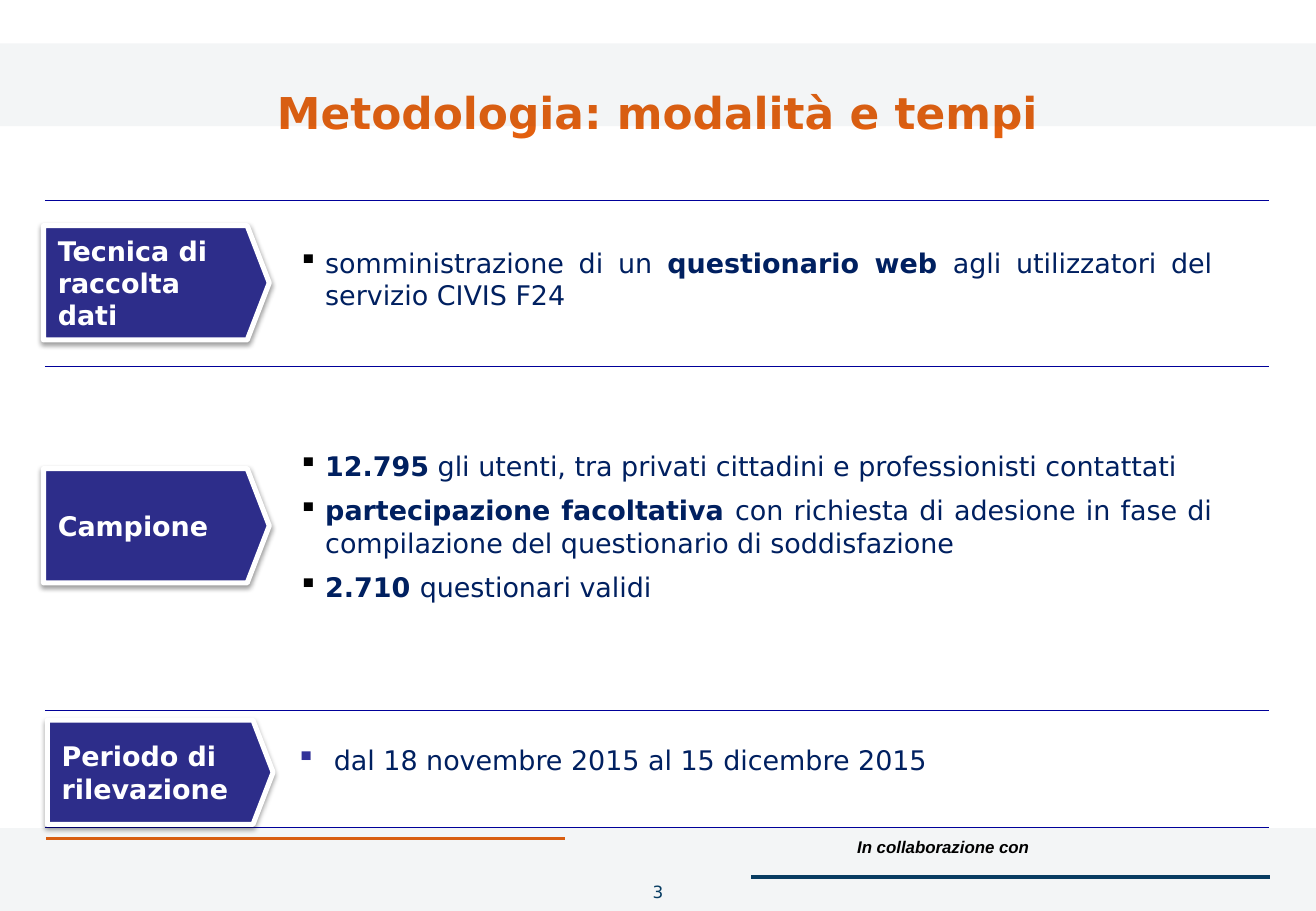
from lxml.etree import SubElement
from pptx import Presentation
from pptx.dml.color import RGBColor
from pptx.enum.shapes import MSO_CONNECTOR as Connector, MSO_SHAPE as Shape
from pptx.enum.text import MSO_ANCHOR as Anchor, PP_ALIGN as Align
from pptx.oxml.ns import qn
from pptx.util import Cm, Pt

ORANGE = RGBColor(0xE3, 0x60, 0x0F)
PETROL = RGBColor(0x07, 0x3C, 0x62)
BAND = RGBColor(0x1E, 0x3D, 0x5C)
RULE = RGBColor(0x00, 0x00, 0x99)
NAVY = RGBColor(0x00, 0x20, 0x60)
INDIGO = RGBColor(0x2D, 0x2D, 0x8A)
BULLET = RGBColor(0x33, 0x33, 0x99)
BLACK = RGBColor(0x00, 0x00, 0x00)
WHITE = RGBColor(0xFF, 0xFF, 0xFF)

WIDTH, HEIGHT = 27.51, 19.05


class Page:
    font = "DejaVu Sans"

    def __init__(self, deck):
        self.slide = deck.slides.add_slide(deck.slide_layouts[5])
        self.shapes = self.slide.shapes

    def span(self, para, text, **style):
        span = para.add_run()
        span.text = text
        color = style.pop("color")
        size = style.pop("size")
        for name, value in {"name": self.font, "size": Pt(size), "bold": False, **style}.items():
            setattr(span.font, name, value)
        span.font.color.rgb = color

    def frame(self, shape, margins, anchor=Anchor.TOP):
        side, edge = (Cm(margin) for margin in margins)
        settings = {
            "word_wrap": True, "vertical_anchor": anchor,
            "margin_left": side, "margin_right": side,
            "margin_top": edge, "margin_bottom": edge,
        }
        for name, value in settings.items():
            setattr(shape.text_frame, name, value)
        return shape.text_frame

    def title(self, text, *place):
        box = self.shapes.title
        for name, value in zip(("left", "top", "width", "height"), place):
            setattr(box, name, Cm(value))
        para = self.frame(box, (0.25, 0.13), Anchor.MIDDLE).paragraphs[0]
        para.alignment = Align.CENTER
        self.span(para, text, size=26, color=ORANGE, bold=True)

    def line(self, left, right, top, color, width):
        line = self.shapes.add_connector(
            Connector.STRAIGHT, Cm(left), Cm(top), Cm(right), Cm(top))
        line.line.color.rgb = color
        line.line.width = Pt(width)
        SubElement(line._element.spPr, qn("a:effectLst"))

    def band(self, top):
        band = self.shapes.add_shape(Shape.RECTANGLE, 0, Cm(top), Cm(WIDTH), Cm(1.73))
        band.shadow.inherit = False
        band.fill.solid()
        band.fill.fore_color.rgb = BAND
        band.line.fill.background()
        color = band._element.spPr.find(".//" + qn("a:srgbClr"))
        SubElement(color, qn("a:alpha"), val="5000")

    def label(self, text, place, align, **style):
        box = self.shapes.add_textbox(*map(Cm, place))
        para = self.frame(box, (0.23, 0.1)).paragraphs[0]
        para.alignment = align
        self.span(para, text, size=10, **style)

    def arrow(self, text, left, top, height):
        arrow = self.shapes.add_shape(
            Shape.PENTAGON, Cm(left), Cm(top), Cm(4.72), Cm(height))
        arrow.adjustments[0] = 0.193
        arrow.fill.solid()
        arrow.fill.fore_color.rgb = INDIGO
        arrow.line.color.rgb = WHITE
        arrow.line.width = Pt(3)
        arrow.shadow.inherit = False
        effects = arrow._element.spPr.find(qn("a:effectLst"))
        shadow = SubElement(
            effects, qn("a:outerShdw"), blurRad=str(Pt(3.1)), dist=str(Pt(1.6)),
            dir="5400000", algn="t", rotWithShape="0")
        color = SubElement(shadow, qn("a:srgbClr"), val=str(BLACK))
        SubElement(color, qn("a:alpha"), val="38000")
        para = self.frame(arrow, (0.3, 0.23), Anchor.MIDDLE).paragraphs[0]
        para.alignment = Align.LEFT
        self.span(para, text, size=16, color=WHITE, bold=True)

    def bullets(self, items, place, indent=(0.56, 0.56), color=BLACK):
        box = self.shapes.add_textbox(*map(Cm, place))
        frame = self.frame(box, (0.3, 0.15))
        for index, item in enumerate(items):
            para = frame.add_paragraph() if index else frame.paragraphs[0]
            para.alignment = Align.JUSTIFY
            if index:
                para.space_before = Pt(7)
            props = para._p.get_or_add_pPr()
            props.set("marL", str(Cm(indent[0])))
            props.set("indent", str(-Cm(indent[1])))
            SubElement(SubElement(props, qn("a:buClr")), qn("a:srgbClr"), val=str(color))
            SubElement(props, qn("a:buChar"), char="▪")
            for text, bold in item:
                self.span(para, text, size=16, color=NAVY, bold=bold)


def main():
    deck = Presentation()
    deck.slide_width, deck.slide_height = Cm(WIDTH), Cm(HEIGHT)
    page = Page(deck)

    page.line(0.97, 11.81, 17.53, ORANGE, 2)
    page.line(15.7, 26.54, 18.34, PETROL, 2)
    for top in (17.32, 0.91):
        page.band(top)
    page.label("In collaborazione con", (16.64, 17.4, 5.1, 0.66), Align.RIGHT,
               name="Arial", color=BLACK, bold=True, italic=True)
    page.title("Metodologia: modalità e tempi", 1.37, 0.76, 24.77, 3.18)

    for top in (4.19, 7.67, 14.86, 17.3):
        page.line(0.94, 26.52, top, RULE, 0.75)

    page.arrow("Tecnica di raccolta dati", 0.91, 4.72, 2.39)
    page.bullets([
        [("somministrazione di un ", False), ("questionario web ", True),
         ("agli utilizzatori del servizio CIVIS F24", False)],
    ], (5.94, 5, 19.71, 2.92))

    page.arrow("Campione", 0.91, 9.8, 2.39)
    page.bullets([
        [("12.795", True),
         (" gli utenti, tra privati cittadini e professionisti contattati", False)],
        [("partecipazione facoltativa ", True),
         ("con richiesta di adesione in fase di compilazione "
          "del questionario di soddisfazione", False)],
        [("2.710 ", True), ("questionari validi", False)],
    ], (5.94, 9.25, 19.71, 3.48))

    page.arrow("Periodo di rilevazione", 0.99, 15.06, 2.18)
    page.bullets([[("dal 18 novembre 2015 al 15 dicembre 2015", False)]],
                 (5.74, 15.39, 20.98, 1.3), (0.94, 0.79), BULLET)

    page.label("3", (12.55, 18.34, 2.41, 0.7), Align.CENTER, color=PETROL)
    deck.save("out.pptx")


if __name__ == "__main__":
    main()
